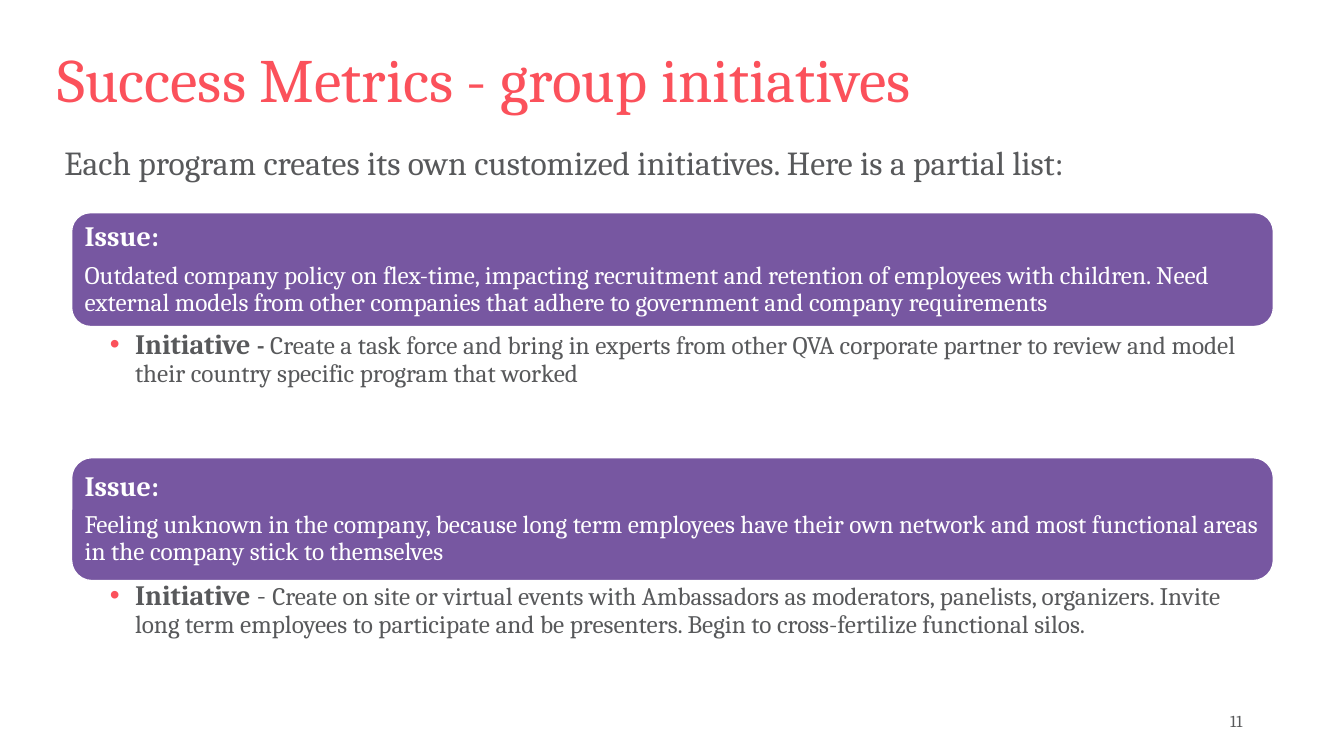
from pptx import Presentation
from pptx.dml.color import RGBColor
from pptx.enum.shapes import MSO_SHAPE as Shape
from pptx.enum.text import MSO_ANCHOR as Anchor, PP_ALIGN as Align
from pptx.oxml.ns import qn
from pptx.util import Inches, Pt
from lxml.etree import SubElement

CORAL, GREY, PURPLE, WHITE = "FB515B", "58595B", "7757A1", "FFFFFF"
LEFT, WIDTH = 0.71, 11.92


def color(value):
    return RGBColor.from_string(value)


def add_box(page, place, anchor=Anchor.TOP, insets=(0.1, 0.05, 0.1, 0.05)):
    frame = page.shapes.add_textbox(*map(Inches, place)).text_frame
    frame.word_wrap = True
    frame.vertical_anchor = anchor
    (frame.margin_left, frame.margin_top,
     frame.margin_right, frame.margin_bottom) = map(Inches, insets)
    return frame


def style(font, size, shade, bold=False):
    font.name = "Cambria"
    font.size = Pt(size)
    font.bold = bold
    font.color.rgb = color(shade)


def add_line(page, place, text, size, shade, anchor=Anchor.TOP, align=Align.LEFT, spacing=1.0):
    para = add_box(page, place, anchor).paragraphs[0]
    para.text = text
    para.alignment = align
    para.line_spacing = spacing
    style(para.font, size, shade)


def add_issue(page, top, height, text):
    panel = page.shapes.add_shape(
        Shape.ROUNDED_RECTANGLE, *map(Inches, (LEFT, top, WIDTH, height)))
    panel.shadow.inherit = False
    panel.fill.solid()
    panel.fill.fore_color.rgb = color(PURPLE)
    panel.line.color.rgb = color(WHITE)
    panel.line.width = Pt(1)

    place = (LEFT + 0.05, top + 0.06, WIDTH - 0.11, height - 0.12)
    frame = add_box(page, place, Anchor.MIDDLE, (0.08,) * 4)
    heading, body = frame.paragraphs[0], frame.add_paragraph()
    heading.text, body.text = "Issue:", text
    style(heading.font, 20, WHITE, bold=True)
    style(body.font, 18, WHITE)
    for para in (heading, body):
        para.line_spacing = 0.9
        para.space_after = Pt(para.font.size.pt * 0.35)


def add_bullet(para):
    props = para._p.get_or_add_pPr()
    props.set("marL", str(Inches(0.25)))
    props.set("indent", str(-Inches(0.25)))
    SubElement(SubElement(props, qn("a:buClr")), qn("a:srgbClr")).set("val", CORAL)
    SubElement(props, qn("a:buFont")).set("typeface", "Arial")
    SubElement(props, qn("a:buChar")).set("char", "•")


def add_initiative(page, top, height, spans):
    frame = add_box(page, (LEFT, top, WIDTH, height), insets=(0.38, 0.03, 0.16, 0.03))
    para = frame.paragraphs[0]
    add_bullet(para)
    para.line_spacing = 0.9
    para.space_after = Pt(4)
    for text, size, bold in spans:
        span = para.add_run()
        span.text = text
        style(span.font, size, GREY, bold)


def main():
    deck = Presentation()
    deck.slide_width, deck.slide_height = Inches(13.33), Inches(7.5)
    page = deck.slides.add_slide(deck.slide_layouts[6])

    add_line(page, (0.47, 0.02, 12.4, 1.59), "Success Metrics - group initiatives",
             44, CORAL, Anchor.MIDDLE, spacing=0.9)
    add_line(page, (0.54, 1.36, 11.36, 0.5),
             "Each program creates its own customized initiatives. Here is a partial list:",
             24, GREY)

    add_issue(page, 2.11, 1.13,
              "Outdated company policy on flex-time, impacting recruitment and retention of "
              "employees with children. Need external models from other companies that adhere "
              "to government and company requirements")
    add_initiative(page, 3.25, 1.27, [
        ("Initiative ", 20, True),
        ("-", 18, True),
        (" Create a task force and bring in experts from other QVA corporate partner to "
         "review and model their country specific program that worked", 18, False)])

    add_issue(page, 4.54, 1.22,
              "Feeling unknown in the company, because long term employees have their own "
              "network and most functional areas in the company stick to themselves")
    add_initiative(page, 5.74, 0.62, [
        ("Initiative ", 20, True),
        ("- ", 20, False),
        ("Create on site or virtual events with Ambassadors as moderators, panelists, "
         "organizers. Invite long term employees to participate and be presenters. Begin to "
         "cross-fertilize functional silos.", 18, False)])

    add_line(page, (9.42, 6.95, 3, 0.4), "11", 12, GREY, Anchor.MIDDLE, Align.RIGHT)
    deck.save("out.pptx")


if __name__ == "__main__":
    main()
